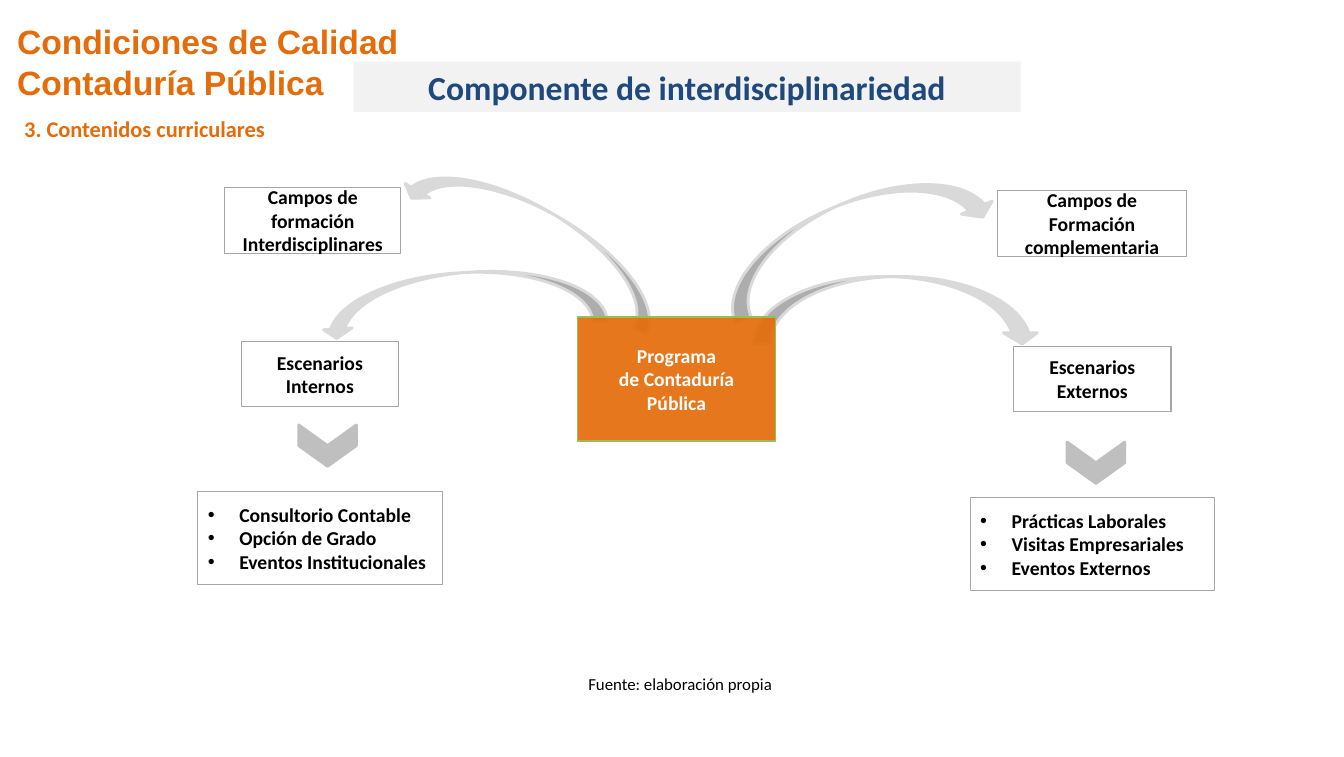
from lxml import etree
from pptx import Presentation
from pptx.dml.color import RGBColor
from pptx.enum.shapes import MSO_SHAPE as SHAPE
from pptx.enum.text import MSO_ANCHOR as ANCHOR, PP_ALIGN as ALIGN
from pptx.oxml.ns import qn
from pptx.util import Cm, Pt

ORANGE, BLACK = "E46C0A", "000000"


def add_box(kind, place, fill=None, line=None, weight=0.75):
    """Add a shape without shadow; place is left, top, width, height in cm."""
    sp = s.shapes.add_shape(kind, *map(Cm, place))
    sp.shadow.inherit = False
    for paint, color in ((sp.fill, fill), (sp.line.fill, line)):
        if color:
            paint.solid()
            paint.fore_color.rgb = RGBColor.from_string(color)
        else:
            paint.background()
    if line:
        sp.line.width = Pt(weight)
    return sp


def write(sp, text, size=14, color=BLACK, font="Calibri", bold=True,
          align=ALIGN.CENTER, anchor=ANCHOR.MIDDLE, bullets=False):
    tf = sp.text_frame
    tf.word_wrap = True
    tf.vertical_anchor = anchor
    tf.text = text
    for p in tf.paragraphs:
        p.alignment = align
        if bullets:
            pPr = p._p.get_or_add_pPr()
            pPr.set("marL", str(Cm(0.79)))
            pPr.set("indent", str(-Cm(0.79)))
            etree.SubElement(pPr, qn("a:buFont"), typeface="Arial")
            etree.SubElement(pPr, qn("a:buChar"), char="•")
        for r in p.runs:
            r.font.name = font
            r.font.size = Pt(size)
            r.font.bold = bold
            r.font.color.rgb = RGBColor.from_string(color)
    return tf


prs = Presentation()
prs.slide_width, prs.slide_height = Cm(33.81), Cm(19.05)
s = prs.slides.add_slide(prs.slide_layouts[6])

# Curved arrows from the programme to its four fields
for left, top, height, rotation, flipped in (
        (8.05, 6.86, 1.45, 176.3, False),
        (18.95, 6.96, 1.7, 0, True),
        (17.88, 5.08, 1.7, 336.9, True),
        (9.91, 5.26, 1.45, 210.2, False)):
    arrow = add_box(SHAPE.CURVED_UP_ARROW, (left, top, 7.19, height), "D9D9D9", "D9D9D9", 2)
    arrow.adjustments[2] = 0.166
    arrow.rotation = rotation
    if flipped:
        arrow._element.spPr.find(qn("a:xfrm")).set("flipV", "1")

# Headings
title = s.shapes.add_textbox(Cm(0.18), Cm(-0.15), Cm(16.84), Cm(3.4))
write(title, "Condiciones de Calidad\nContaduría Pública", 24, ORANGE, "Arial", align=ALIGN.LEFT)
banner = add_box(SHAPE.RECTANGLE, (8.89, 1.55, 16.79, 1.27), "F2F2F2")
write(banner, "Componente de interdisciplinariedad", 24, "1F497D", anchor=ANCHOR.TOP)
subtitle = s.shapes.add_textbox(Cm(0.36), Cm(2.77), Cm(16.21), Cm(0.94))
write(subtitle, "3. Contenidos curriculares", 16, ORANGE, align=ALIGN.LEFT, anchor=ANCHOR.TOP)

# Fields and scenarios
for left, top, width, text in (
        (25.1, 4.8, 4.75, "Campos de Formación complementaria"),
        (5.66, 4.72, 4.42, "Campos de formación Interdisciplinares"),
        (6.07, 8.59, 3.96, "Escenarios Internos"),
        (25.5, 8.71, 3.96, "Escenarios Externos")):
    write(add_box(SHAPE.RECTANGLE, (left, top, width, 1.65), line="A6A6A6"), text)

# Programme in the centre
program = add_box(SHAPE.RECTANGLE, (14.53, 7.98, 4.98, 3.12), ORANGE, "9BBB59", 1)
fill_color = program._element.spPr.find(qn("a:solidFill"))[0]
etree.SubElement(fill_color, qn("a:alpha"), val="92000")
tf = write(program, "Programa\nde Contaduría Pública", color="FFFFFF")
tf.margin_left = tf.margin_right = Cm(0.28)

# Activities of each scenario, with the chevron leading to them
for left, top, chevron_left, chevron_top, items in (
        (24.41, 12.52, 27.05, 10.92,
         ("Prácticas Laborales", "Visitas Empresariales", "Eventos Externos")),
        (4.98, 12.37, 7.72, 10.49,
         ("Consultorio Contable", "Opción de Grado", "Eventos Institucionales"))):
    activities = add_box(SHAPE.RECTANGLE, (left, top, 6.15, 2.34), line="A6A6A6")
    write(activities, "\n".join(items), align=ALIGN.LEFT, bullets=True)
    chevron = add_box(SHAPE.CHEVRON, (chevron_left, chevron_top, 1.04, 1.45), "BFBFBF", "BFBFBF", 2)
    chevron.rotation = 90

# Credit line
credit = s.shapes.add_textbox(Cm(14.3), Cm(16.76), Cm(5.44), Cm(0.84))
tf = write(credit, "Fuente: elaboración propia", 12, bold=False, align=ALIGN.LEFT, anchor=ANCHOR.TOP)
tf.word_wrap = False
p = tf.paragraphs[0]
p.line_spacing = 1.15
p._p.get_or_add_pPr().set("indent", str(Cm(0.25)))

prs.save("out.pptx")
